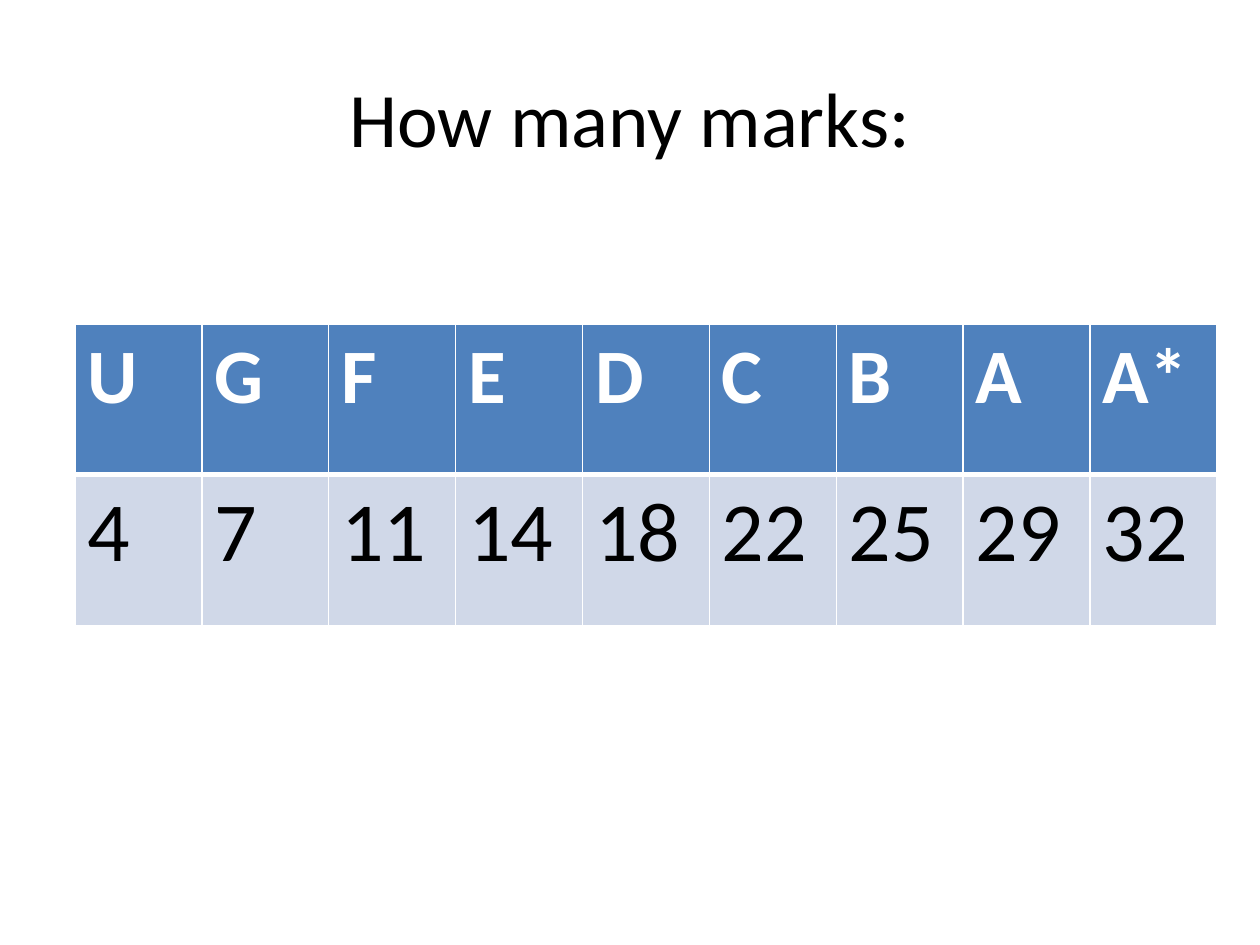
from dataclasses import dataclass

from lxml.etree import SubElement
from pptx import Presentation
from pptx.dml.color import RGBColor
from pptx.enum.text import MSO_ANCHOR as Anchor, PP_ALIGN as Align
from pptx.oxml.ns import qn
from pptx.util import Cm, Pt


@dataclass(frozen=True)
class Theme:
    """Colours, font and type sizes of the slide."""
    font: str = "Calibri"
    text: str = "000000"
    head_text: str = "FFFFFF"
    head_fill: str = "4F81BD"
    mark_fill: str = "D0D8E8"
    border: str = "FFFFFF"
    title_size: int = 44
    head_size: int = 44
    mark_size: int = 48
    thin: int = 1
    thick: int = 3


THEME = Theme()
MARKS = {"U": 4, "G": 7, "F": 11, "E": 14, "D": 18, "C": 22, "B": 25, "A": 29, "A*": 32}


def write(tf, text, size, color, bold=False, align=Align.LEFT):
    """Put one formatted run into a text frame."""
    p = tf.paragraphs[0]
    p.alignment = align
    r = p.add_run()
    r.text = text
    for name, value in {"name": THEME.font, "size": Pt(size), "bold": bold}.items():
        setattr(r.font, name, value)
    r.font.color.rgb = RGBColor.from_string(color)


def set_borders(cell, widths):
    """Draw the cell's borders from a dict of side to width in points."""
    tc_pr = cell._tc.get_or_add_tcPr()
    for side, width in widths.items():
        ln = SubElement(tc_pr, qn(f"a:ln{side}"), w=str(Pt(width)))
        fill = SubElement(ln, qn("a:solidFill"))
        SubElement(fill, qn("a:srgbClr"), val=THEME.border)


def add_title(slide, text, left, top, width, height):
    """Add the centred title in the given box."""
    tf = slide.shapes.add_textbox(left, top, width, height).text_frame
    for name, value in {"word_wrap": True, "vertical_anchor": Anchor.MIDDLE}.items():
        setattr(tf, name, value)
    write(tf, text, THEME.title_size, THEME.text, align=Align.CENTER)


def add_marks_table(slide, marks, left, top, width, height):
    """Add a row of grades above a row of marks in the given box."""
    table = slide.shapes.add_table(2, len(marks), left, top, width, height).table
    for col in table.columns:
        col.width = width // len(marks)
    t = THEME
    rows = (
        (marks.keys(), t.head_size, t.head_text, True, t.head_fill, t.thin, t.thick),
        (marks.values(), t.mark_size, t.text, False, t.mark_fill, t.thick, t.thin),
    )
    for i, (values, size, color, bold, fill, above, below) in enumerate(rows):
        for j, value in enumerate(values):
            cell = table.cell(i, j)
            set_borders(cell, {"L": t.thin, "R": t.thin, "T": above, "B": below})
            cell.fill.solid()
            cell.fill.fore_color.rgb = RGBColor.from_string(fill)
            write(cell.text_frame, str(value), size, color, bold)


def main():
    """Build the slide and save it."""
    prs = Presentation()
    prs.slide_width, prs.slide_height = Cm(25.4), Cm(19.05)
    slide = prs.slides.add_slide(prs.slide_layouts[6])
    add_title(slide, "How many marks:", Cm(1.27), Cm(0.76), Cm(22.86), Cm(3.18))
    add_marks_table(slide, MARKS, Cm(1.51), Cm(6.53), Cm(23.03), Cm(6.08))
    prs.save("out.pptx")


if __name__ == "__main__":
    main()
